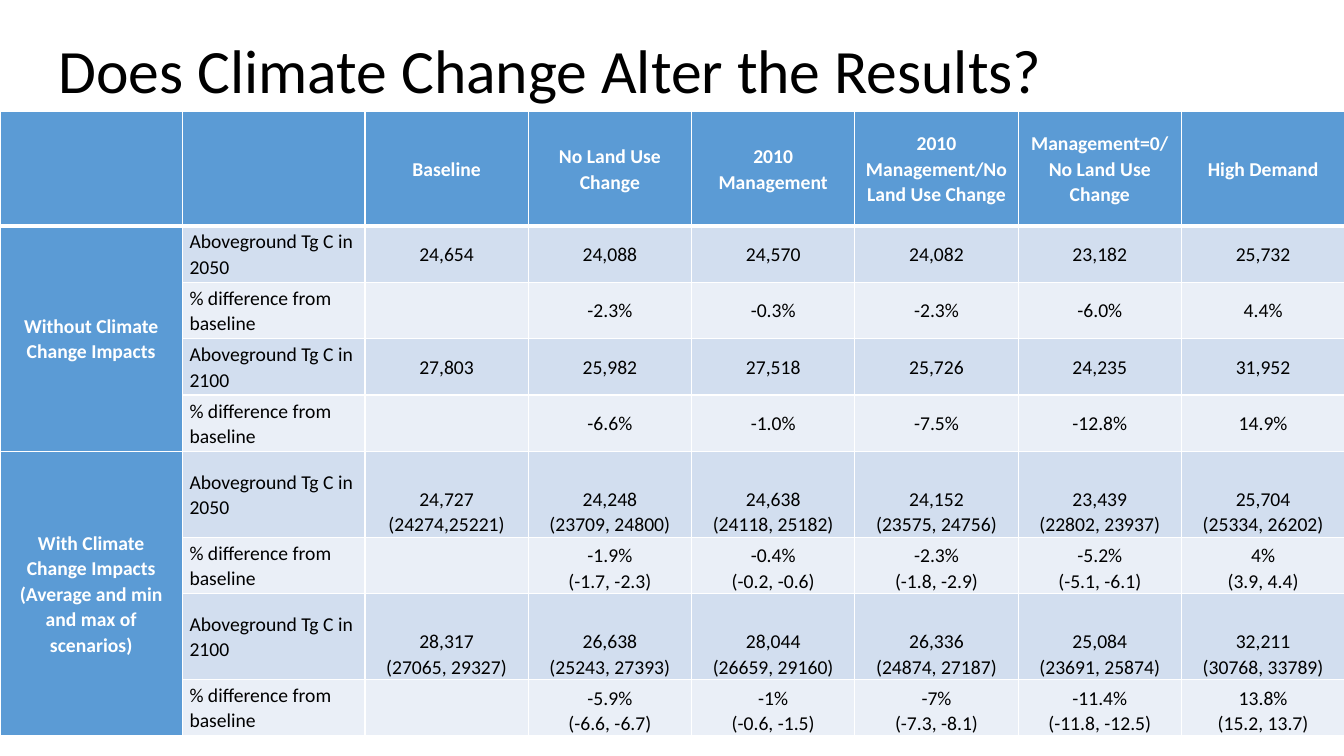
"""Build the slide that compares carbon results with and without climate change."""
from lxml.etree import fromstring
from pptx import Presentation
from pptx.dml.color import RGBColor as RGB
from pptx.enum.text import MSO_ANCHOR as Anchor, PP_ALIGN as Align
from pptx.util import Inches, Pt

INK = {"head": "5B9BD5", "dark": "D2DEEF", "light": "EAEFF7",
       "white": "FFFFFF", "black": "000000"}
NS = "http://schemas.openxmlformats.org/drawingml/2006/main"
STOCK_50 = "Aboveground Tg C in 2050"
STOCK_100 = "Aboveground Tg C in 2100"
DIFF = "% difference from baseline"
ROWS = [
    ["", "", "Baseline", "No Land Use Change", "2010 Management",
     "2010 Management/No Land Use Change",
     "Management=0/No Land Use Change", "High Demand"],
    ["Without Climate Change Impacts", STOCK_50,
     "24,654", "24,088", "24,570", "24,082", "23,182", "25,732"],
    ["", DIFF, "", "-2.3%", "-0.3%", "-2.3%", "-6.0%", "4.4%"],
    ["", STOCK_100,
     "27,803", "25,982", "27,518", "25,726", "24,235", "31,952"],
    ["", DIFF, "", "-6.6%", "-1.0%", "-7.5%", "-12.8%", "14.9%"],
    ["With Climate Change Impacts (Average and min and max of scenarios)",
     STOCK_50, "24,727\n(24274,25221)", "24,248\n(23709, 24800)",
     "24,638\n(24118, 25182)", "24,152\n(23575, 24756)",
     "23,439\n(22802, 23937)", "25,704\n(25334, 26202)"],
    ["", DIFF, "", "-1.9%\n(-1.7, -2.3)", "-0.4%\n(-0.2, -0.6)",
     "-2.3%\n(-1.8, -2.9)", "-5.2%\n(-5.1, -6.1)", "4%\n(3.9, 4.4)"],
    ["", STOCK_100, "28,317\n(27065, 29327)", "26,638\n(25243, 27393)",
     "28,044\n(26659, 29160)", "26,336\n(24874, 27187)",
     "25,084\n(23691, 25874)", "32,211\n(30768, 33789)"],
    ["", DIFF, "", "-5.9%\n(-6.6, -6.7)", "-1%\n(-0.6, -1.5)",
     "-7%\n(-7.3, -8.1)", "-11.4%\n(-11.8, -12.5)", "13.8%\n(15.2, 13.7)"],
]
WIDTHS = [1.81] * 2 + [1.62] * 6
HEIGHTS = [1.13] + [0.56] * 4 + [0.85, 0.56] * 2


def set_font(par, size, ink, bold=False):
    par.font.name = "Calibri"
    par.font.size = Pt(size)
    par.font.bold = bold
    par.font.color.rgb = RGB.from_string(INK[ink])


def add_edges(cell, row):
    props = cell._tc.get_or_add_tcPr()
    for spot, side in enumerate("LRTB"):
        thick = (row, side) in ((0, "B"), (1, "T"))
        props.insert(spot, fromstring(
            f'<a:ln{side} xmlns:a="{NS}" w="{Pt(3 if thick else 1)}">'
            f'<a:solidFill><a:srgbClr val="{INK["white"]}"/></a:solidFill>'
            f'</a:ln{side}>'))


deck = Presentation()
deck.slide_width, deck.slide_height = Inches(13.33), Inches(7.5)
slide = deck.slides.add_slide(deck.slide_layouts[5])

title = slide.shapes.title
title.left, title.top = Inches(0.48), Inches(0)
title.width, title.height = Inches(11.5), Inches(1.45)
title.text_frame.text = "Does Climate Change Alter the Results?"
title.text_frame.vertical_anchor = Anchor.MIDDLE
line = title.text_frame.paragraphs[0]
line.alignment = Align.LEFT
line.line_spacing = 0.9
set_font(line, 44, "black")

table = slide.shapes.add_table(
    len(ROWS), len(WIDTHS), Inches(0), Inches(1.11),
    Inches(13.33), Inches(6.18)).table
table.first_col = True
for col, width in zip(table.columns, WIDTHS):
    col.width = Inches(width)
for row, height in zip(table.rows, HEIGHTS):
    row.height = Inches(height)
for top in (1, 5):
    table.cell(top, 0).merge(table.cell(top + 3, 0))

for r, texts in enumerate(ROWS):
    for c, text in enumerate(texts):
        cell = table.cell(r, c)
        head = r == 0 or c == 0
        band = "head" if head else "dark" if r % 2 else "light"
        cell.fill.solid()
        cell.fill.fore_color.rgb = RGB.from_string(INK[band])
        add_edges(cell, r)
        cell.margin_left = cell.margin_right = Inches(0.07)
        cell.margin_top = cell.margin_bottom = Inches(0)
        low = r >= 5 and c >= 2
        cell.vertical_anchor = Anchor.BOTTOM if low else Anchor.MIDDLE
        cell.text = text
        for par in cell.text_frame.paragraphs:
            par.alignment = Align.LEFT if c == 1 else Align.CENTER
            par.line_spacing = 1.07
            set_font(par, 14, "white" if head else "black", head)

deck.save("out.pptx")
